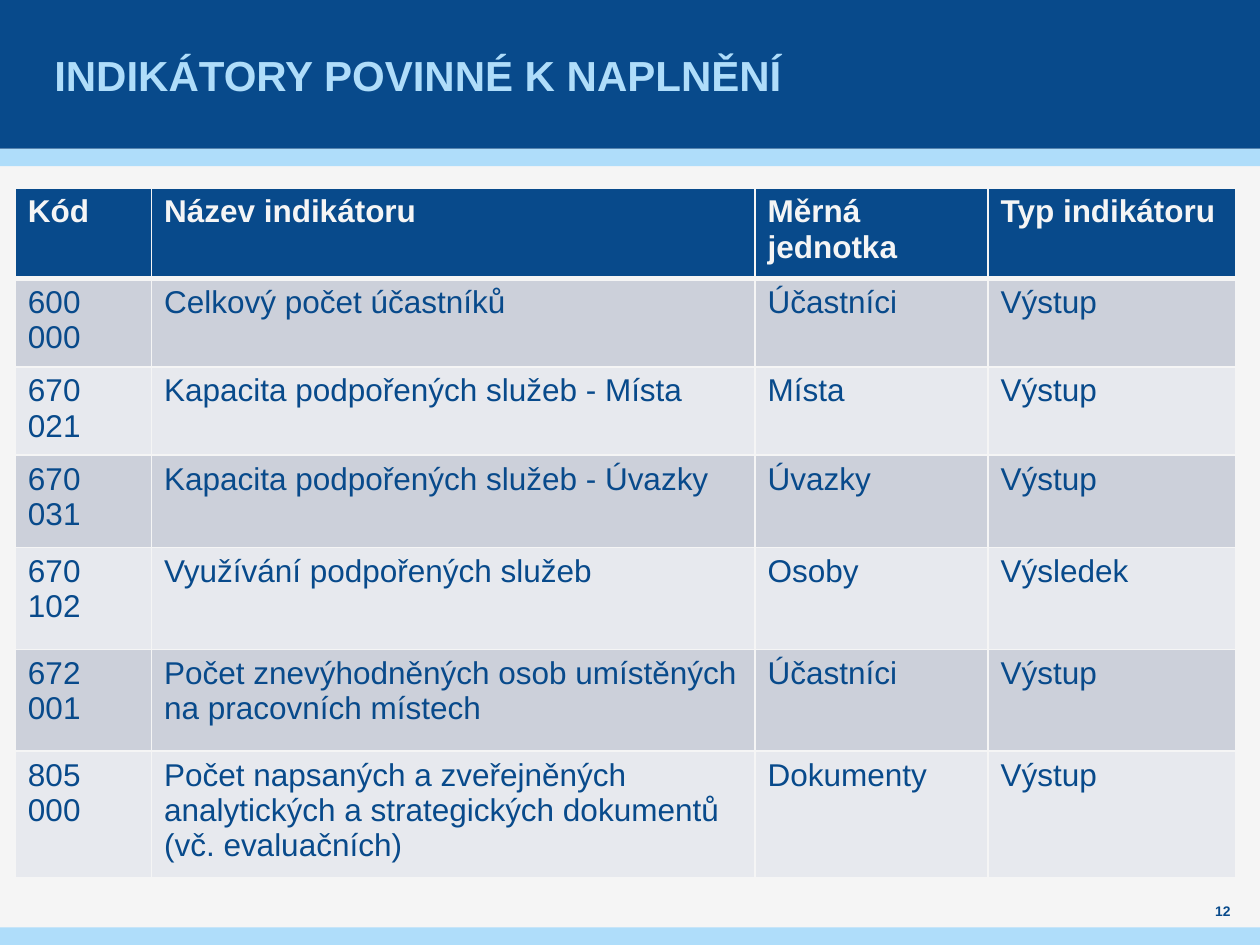
from lxml.etree import SubElement
from pptx import Presentation
from pptx.dml.color import RGBColor
from pptx.enum.shapes import MSO_SHAPE
from pptx.enum.text import MSO_ANCHOR, PP_ALIGN
from pptx.oxml.ns import qn
from pptx.util import Pt

COLORS = {
    "navy": "084A8B",
    "sky": "AFDDFA",
    "paper": "F5F5F5",
    "band_dark": "CCD0DA",
    "band_light": "E7E9EE",
}
FONT = "Arial"
SLIDE_W, SLIDE_H = 720, 540

COL_WIDTHS = [77.8, 344.9, 133.2, 141.8]
ROW_HEIGHTS = [51.8, 50.4, 43.2, 52.6, 58.3, 58.3, 58.3]
INDICATORS = [
    ("Kód", "Název indikátoru", "Měrná jednotka", "Typ indikátoru"),
    ("600 000", "Celkový počet účastníků", "Účastníci", "Výstup"),
    ("670 021", "Kapacita podpořených služeb - Místa", "Místa", "Výstup"),
    ("670 031", "Kapacita podpořených služeb - Úvazky", "Úvazky", "Výstup"),
    ("670 102", "Využívání podpořených služeb", "Osoby", "Výsledek"),
    ("672 001", "Počet znevýhodněných osob umístěných na pracovních místech",
     "Účastníci", "Výstup"),
    ("805 000", "Počet napsaných a zveřejněných analytických a strategických "
     "dokumentů (vč. evaluačních)", "Dokumenty", "Výstup"),
]


def rgb(name):
    return RGBColor.from_string(COLORS[name])


def set_text(tf, text, size, color, bold=False, align=PP_ALIGN.LEFT):
    tf.text = text
    p = tf.paragraphs[0]
    p.alignment = align
    font = p.runs[0].font
    font.name, font.size, font.bold = FONT, Pt(size), bold
    font.color.rgb = rgb(color)


def add_band(s, top, height, color):
    sp = s.shapes.add_shape(MSO_SHAPE.RECTANGLE, 0, Pt(top), Pt(SLIDE_W), Pt(height))
    sp.shadow.inherit = False
    sp.fill.solid()
    sp.fill.fore_color.rgb = rgb(color)
    sp.line.fill.background()


def add_label(s, box, text, size, color, inset=0, align=PP_ALIGN.LEFT):
    sp = s.shapes.add_textbox(*[Pt(v) for v in box])
    tf = sp.text_frame
    tf.word_wrap = True
    tf.vertical_anchor = MSO_ANCHOR.MIDDLE
    tf.margin_left = tf.margin_right = Pt(inset)
    tf.margin_top = tf.margin_bottom = 0
    set_text(tf, text, size, color, bold=True, align=align)


def set_borders(cell, widths):
    """Draw the cell edges; borders must come before the fill in tcPr."""
    tcPr = cell._tc.get_or_add_tcPr()
    for side, width in widths.items():
        ln = SubElement(tcPr, qn(f"a:ln{side}"), w=str(Pt(width)))
        fill = SubElement(ln, qn("a:solidFill"))
        SubElement(fill, qn("a:srgbClr"), val=COLORS["paper"])


def add_indicator_table(s, left, top):
    frame = s.shapes.add_table(len(INDICATORS), len(COL_WIDTHS), Pt(left), Pt(top),
                               Pt(sum(COL_WIDTHS)), Pt(sum(ROW_HEIGHTS)))
    table = frame.table
    for col, width in zip(table.columns, COL_WIDTHS):
        col.width = Pt(width)
    for i, (row, height) in enumerate(zip(table.rows, ROW_HEIGHTS)):
        row.height = Pt(height)
        header = i == 0
        band = "navy" if header else "band_dark" if i % 2 else "band_light"
        edges = {"L": 1, "R": 1, "T": 3 if i == 1 else 1, "B": 3 if header else 1}
        for cell, text in zip(row.cells, INDICATORS[i]):
            set_text(cell.text_frame, text, 18, "paper" if header else "navy", header)
            set_borders(cell, edges)
            cell.fill.solid()
            cell.fill.fore_color.rgb = rgb(band)


def main():
    prs = Presentation()
    prs.slide_width, prs.slide_height = Pt(SLIDE_W), Pt(SLIDE_H)
    s = prs.slides.add_slide(prs.slide_layouts[6])
    s.background.fill.solid()
    s.background.fill.fore_color.rgb = rgb("paper")

    # Header and footer bands
    add_band(s, 85, 10, "sky")
    add_band(s, 0, 85, "navy")
    add_band(s, 530, 10, "sky")

    # Title and page number
    add_label(s, (28, 0, 663, 85), "INDIKÁTORY POVINNÉ K NAPLNĚNÍ", 24, "sky", inset=3)
    add_label(s, (680.4, 513.4, 36.7, 14.4), "12", 7.9, "navy", align=PP_ALIGN.CENTER)

    # Indicators
    add_indicator_table(s, 8.8, 107.5)

    prs.save("out.pptx")


if __name__ == "__main__":
    main()
